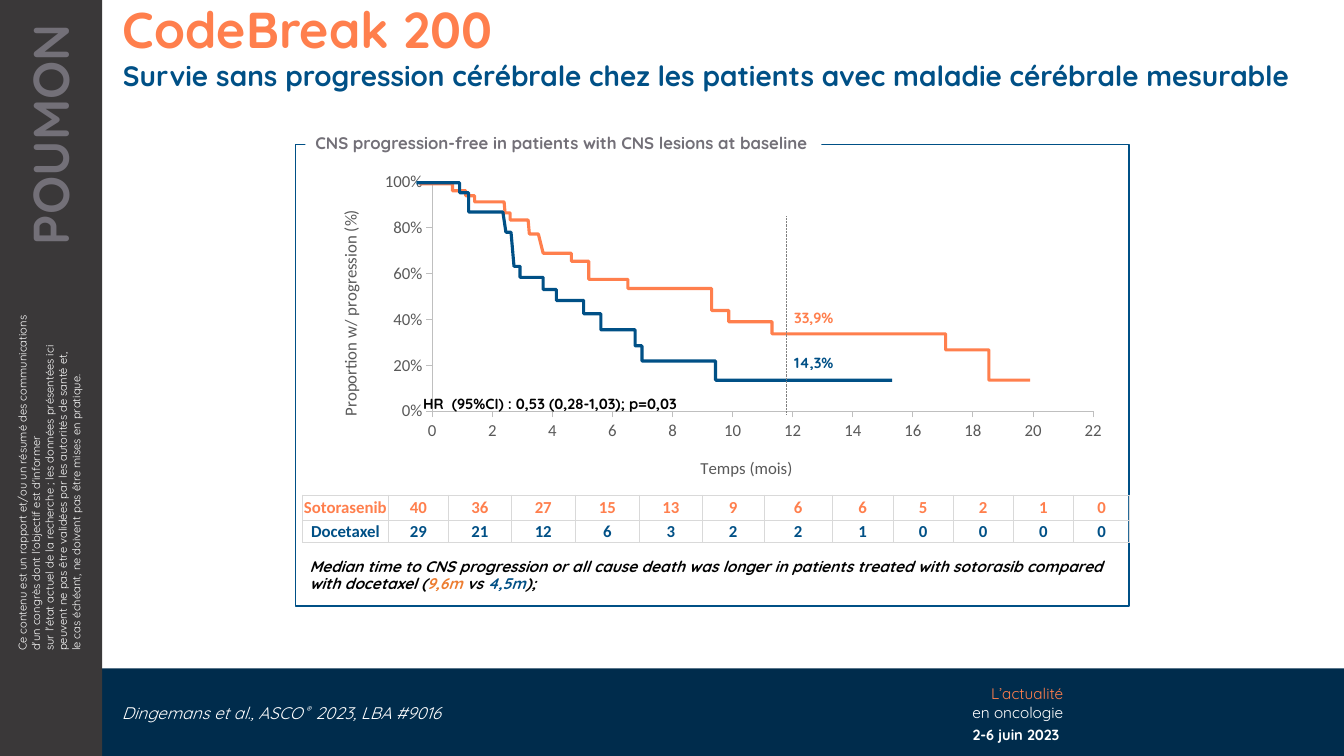
from lxml.etree import SubElement
from pptx import Presentation
from pptx.chart.data import XyChartData
from pptx.dml.color import RGBColor
from pptx.enum.chart import XL_CHART_TYPE, XL_MARKER_STYLE, XL_TICK_MARK
from pptx.enum.dml import MSO_LINE
from pptx.enum.shapes import MSO_CONNECTOR, MSO_SHAPE
from pptx.enum.text import MSO_ANCHOR, MSO_AUTO_SIZE, PP_ALIGN
from pptx.oxml import parse_xml
from pptx.oxml.ns import nsdecls, qn
from pptx.util import Pt

ORANGE, BLUE, GREY, WHITE, BLACK = "FF7F4D", "005086", "737078", "FFFFFF", "000000"
AXIS_TEXT, AXIS_LINE, GRID_LINE = "595959", "BFBFBF", "D9D9D9"

TITLE = "CodeBreak 200"
SUBTITLE = "Survie sans progression cérébrale chez les patients avec maladie cérébrale mesurable"
DISCLAIMER = (
    "Ce contenu est un rapport et/ou un résumé des communications d'un congrès dont l'objectif est d'informer\v"
    "sur l'état actuel de la recherche ; les données présentées ici peuvent ne pas être validées par les autorités de santé et,\v"
    "le cas échéant, ne doivent pas être mises en pratique."
)
CITATION = [("Dingemans et al., ASCO", {}), (" ®", {"baseline": "30000"}), (" 2023, LBA #9016", {})]
PROGRAMME = [("L’actualité\v", {"color": ORANGE}), ("en oncologie", {"color": WHITE})]
CHART_HEADING = "CNS progression-free in patients with CNS lesions at baseline"
CONCLUSION = [
    ("Median time to CNS progression or all cause death was longer in patients treated with sotorasib compared with docetaxel (", {"color": BLACK}),
    ("9,6m ", {"color": "ED7D31"}),
    ("vs ", {"color": BLACK}),
    ("4,5m", {"color": BLUE}),
    (");", {"color": BLACK}),
]
HAZARD_RATIO = "HR  (95%CI) : 0,53 (0,28-1,03); p=0,03"
RATES = [("33,9%", ORANGE, 217.4), ("14,3%", BLUE, 249.1)]

AT_RISK = [
    ("Sotorasenib", ORANGE, 18, [40, 36, 27, 15, 13, 9, 6, 6, 5, 2, 1, 0]),
    ("Docetaxel", BLUE, 15.8, [29, 21, 12, 6, 3, 2, 2, 1, 0, 0, 0, 0]),
]
COLUMN_WIDTHS = [61.4, 43, 44.8, 45.8, 46, 44.6, 44.5, 48.4, 43.6, 43, 42.8, 43, 40.3]

# Each drop: month it begins, month it ends, percentage reached.
CURVES = [
    (ORANGE, (-0.42, 99.3), [
        (0.68, 0.68, 96.3), (1.12, 1.12, 94.1), (1.42, 1.42, 91.4), (2.4, 2.43, 86.6),
        (2.6, 2.6, 83.5), (3.2, 3.24, 77.4), (3.54, 3.7, 69), (4.64, 4.64, 65.5),
        (5.22, 5.22, 57.6), (6.52, 6.52, 53.6), (9.31, 9.31, 44), (9.88, 9.88, 39.1),
        (11.32, 11.32, 33.8), (17.1, 17.1, 26.8), (18.54, 18.54, 13.6)], 19.91),
    (BLUE, (-0.52, 99.8), [
        (0.92, 0.92, 95.4), (1.22, 1.22, 87), (2.36, 2.46, 78.2), (2.63, 2.73, 63.3),
        (2.93, 2.93, 58.5), (3.7, 3.7, 53.2), (4.14, 4.14, 48.4), (5.05, 5.05, 42.6),
        (5.62, 5.62, 35.6), (6.76, 6.76, 28.6), (6.99, 6.99, 22), (9.44, 9.44, 13.6)], 15.32),
]
CHART = (229.7, 118.1, 568.8, 235.4)
PLOT = (308.6, 130.2, 472, 163.6)
LAST_MONTH = 22


def color(value):
    return RGBColor.from_string(value)


def points(*values):
    return [Pt(value) for value in values]


def style(font, size, fill=None, bold=None, italic=None, name="Quicksand"):
    font.name, font.size, font.bold, font.italic = name, Pt(size), bold, italic
    if fill:
        font.color.rgb = color(fill)


def write(box, content, size, fill=None, bold=None, italic=None, align=PP_ALIGN.LEFT,
          spacing=None, insets=(7.2, 3.6, 7.2, 3.6), anchor=MSO_ANCHOR.TOP):
    frame = box.text_frame
    frame.word_wrap, frame.auto_size, frame.vertical_anchor = True, MSO_AUTO_SIZE.NONE, anchor
    frame.margin_left, frame.margin_top, frame.margin_right, frame.margin_bottom = points(*insets)
    para = frame.paragraphs[0]
    para.alignment, para.line_spacing, para.space_before = align, spacing, Pt(0)
    if box.is_placeholder:
        properties = para._p.get_or_add_pPr()
        properties.set("marL", "0")
        properties.set("indent", "0")
        SubElement(properties, qn("a:buNone"))
    style(para.font, size, fill, bold, italic)
    for text, extra in [(content, {})] if isinstance(content, str) else content:
        for index, line in enumerate(text.split("\v")):
            if index:
                para.add_line_break()
            if not line:
                continue
            span = para.add_run()
            span.text = line
            if "color" in extra:
                span.font.color.rgb = color(extra["color"])
            if "baseline" in extra:
                span._r.get_or_add_rPr().set("baseline", extra["baseline"])


def add_text(bounds, content, size, rotation=0, **options):
    box = page.shapes.add_textbox(*points(*bounds))
    box.rotation = rotation
    write(box, content, size, **options)


def add_box(bounds, fill=None, line=None):
    box = page.shapes.add_shape(MSO_SHAPE.RECTANGLE, *points(*bounds))
    box.shadow.inherit = False
    if fill:
        box.fill.solid()
        box.fill.fore_color.rgb = color(fill)
    else:
        box.fill.background()
    if line:
        box.line.color.rgb, box.line.width = color(line), Pt(1)
    else:
        box.line.fill.background()
    return box


def fill_placeholder(box, bounds, content, size, fill):
    box.left, box.top, box.width, box.height = points(*bounds)
    write(box, content, size, fill, True, spacing=0.9, insets=(14.4, 3.6, 7.2, 3.6))


def manual_layout(x, y, size=""):
    target = '<c:layoutTarget val="inner"/>' if size else ""
    return parse_xml(f'<c:layout {nsdecls("c")}><c:manualLayout>{target}<c:xMode val="edge"/><c:yMode val="edge"/>'
                     f'<c:x val="{x:.3f}"/><c:y val="{y:.3f}"/>{size}</c:manualLayout></c:layout>')


def place(element, layout, position):
    for old in element.findall(qn("c:layout")):
        element.remove(old)
    element.insert(position, layout)


def add_survival_chart():
    data = XyChartData()
    data.add_series("Series 1").add_data_point(0.7, 2.7)
    chart = page.shapes.add_chart(XL_CHART_TYPE.XY_SCATTER, *points(*CHART), data).chart
    chart.has_legend = chart.has_title = False
    style(chart.font, 12, BLACK, name="Calibri")
    chart.plots[0].vary_by_categories = False
    series = chart.plots[0].series[0]
    series.smooth = False
    series.format.line.fill.background()
    series.marker.style = XL_MARKER_STYLE.CIRCLE
    series.marker.size = 5
    series.marker.format.fill.background()
    series.marker.format.line.fill.background()
    for axis, top, step, number, title, corner in [
        (chart.category_axis, LAST_MONTH, 2, "General", "Temps (mois)", (0.472, 0.875)),
        (chart.value_axis, 1, 0.2, "0%", "Proportion w/ progression (%)", (0.018, 0.126)),
    ]:
        axis.minimum_scale, axis.maximum_scale, axis.major_unit = 0, top, step
        axis.has_major_gridlines = False
        axis.major_tick_mark = XL_TICK_MARK.OUTSIDE
        axis.tick_labels.number_format, axis.tick_labels.number_format_is_linked = number, False
        style(axis.tick_labels.font, 12, AXIS_TEXT, name="Calibri")
        axis.format.line.color.rgb, axis.format.line.width = color(AXIS_LINE), Pt(0.75)
        axis.axis_title.text_frame.text = title
        style(axis.axis_title.text_frame.paragraphs[0].font, 12, AXIS_TEXT, False, name="Calibri")
        place(axis.axis_title._element, manual_layout(*corner), 1)
    x, y, width, height = [(PLOT[i] - (CHART[i] if i < 2 else 0)) / CHART[2 + i % 2] for i in range(4)]
    size = f'<c:w val="{width:.3f}"/><c:h val="{height:.3f}"/>'
    place(chart._chartSpace.chart.plotArea, manual_layout(x, y, size), 0)


def plot_point(month, percentage):
    left, top, width, height = PLOT
    return Pt(left + month / LAST_MONTH * width), Pt(top + (1 - percentage / 100) * height)


def add_curve(stroke, start, drops, end):
    vertices, level = [], start[1]
    for begin, finish, reached in drops:
        vertices += [plot_point(begin, level), plot_point(finish, reached)]
        level = reached
    builder = page.shapes.build_freeform(*plot_point(*start))
    builder.add_line_segments(vertices + [plot_point(end, level)], close=False)
    curve = builder.convert_to_shape()
    curve.shadow.inherit = False
    curve.fill.background()
    curve.line.color.rgb, curve.line.width = color(stroke), Pt(2.25)


def add_risk_table():
    heights = [row[2] for row in AT_RISK]
    table = page.shapes.add_table(len(AT_RISK), len(COLUMN_WIDTHS),
                                  *points(216, 353.5, sum(COLUMN_WIDTHS), sum(heights))).table
    table.first_row = table.horz_banding = False
    for column, width in zip(table.columns, COLUMN_WIDTHS):
        column.width = Pt(width)
    for row, (drug, ink, height, counts) in zip(table.rows, AT_RISK):
        row.height = Pt(height)
        for cell, value in zip(row.cells, [drug, *counts]):
            cell.text, cell.vertical_anchor = str(value), MSO_ANCHOR.MIDDLE
            cell.margin_left, cell.margin_top, cell.margin_right, cell.margin_bottom = points(0.7, 0.7, 0.7, 0)
            para = cell.text_frame.paragraphs[0]
            para.alignment = PP_ALIGN.CENTER
            style(para.font, 12, ink, True, name="Calibri")
            for side in ("lnL", "lnR", "lnT", "lnB"):
                cell._tc.get_or_add_tcPr().append(parse_xml(
                    f'<a:{side} {nsdecls("a")} w="6350"><a:solidFill><a:srgbClr val="{GRID_LINE}"/></a:solidFill></a:{side}>'))
            cell.fill.solid()
            cell.fill.fore_color.rgb = color(WHITE)
            SubElement(cell._tc.tcPr.find(f'{qn("a:solidFill")}/{qn("a:srgbClr")}'), qn("a:alpha"), val="15000")


deck = Presentation()
deck.slide_width, deck.slide_height = points(960, 540)
page = deck.slides.add_slide(deck.slide_layouts[1])
fill_placeholder(page.shapes.title, (73.4, 0, 886.6, 41), TITLE, 36, ORANGE)
fill_placeholder(page.placeholders[1], (73.4, 41, 886.6, 26.6), SUBTITLE, 20, BLUE)
add_box((73, 477.4, 887, 62.6), "002C4C")
add_box((0, 0, 73, 540), "3A3839")
add_text((-94.3, 314.6, 259.2, 55.4), DISCLAIMER, 8, 270, fill=WHITE)
add_text((-74.9, 85, 221, 51.1), "POUMON", 36, 270, fill=GREY, bold=True,
         align=PP_ALIGN.RIGHT, insets=(7.2, 3.6, 17.3, 3.6))
add_text((648.7, 485.3, 118, 33.8), PROGRAMME, 11, align=PP_ALIGN.RIGHT)
add_text((648.7, 516.2, 110.9, 19.4), "2-6 juin 2023", 10.5, fill=WHITE, bold=True,
         align=PP_ALIGN.RIGHT, spacing=0.9, insets=(7.2, 3.6, 2.9, 3.6))
add_text((79.9, 499.7, 406, 19.4), CITATION, 12, fill=WHITE, italic=True, spacing=0.9)
add_box((211, 103, 595.4, 329.8), line=BLUE)
write(add_box((218.2, 87.8, 368.6, 30.2), WHITE), CHART_HEADING, 12, GREY, True,
      spacing=0.9, anchor=MSO_ANCHOR.MIDDLE)
add_risk_table()
add_text((218.2, 396.7, 580.3, 28.1), CONCLUSION, 11, bold=True, italic=True, spacing=0.9, insets=(2.9,) * 4)
add_survival_chart()
add_text((295.2, 278.6, 427, 20.2), HAZARD_RATIO, 10.5, fill=BLACK, bold=True)
for curve_parts in CURVES:
    add_curve(*curve_parts)
marker = page.shapes.add_connector(MSO_CONNECTOR.STRAIGHT, *points(561.6, 295.9, 561.6, 154.1))
SubElement(marker._element.spPr, qn("a:effectLst"))
marker.line.color.rgb, marker.line.width, marker.line.dash_style = color("808080"), Pt(0.5), MSO_LINE.ROUND_DOT
for rate, ink, top in RATES:
    add_text((560.2, top, 105.8, 20.2), rate, 10.5, fill=ink, bold=True)
deck.save("out.pptx")
